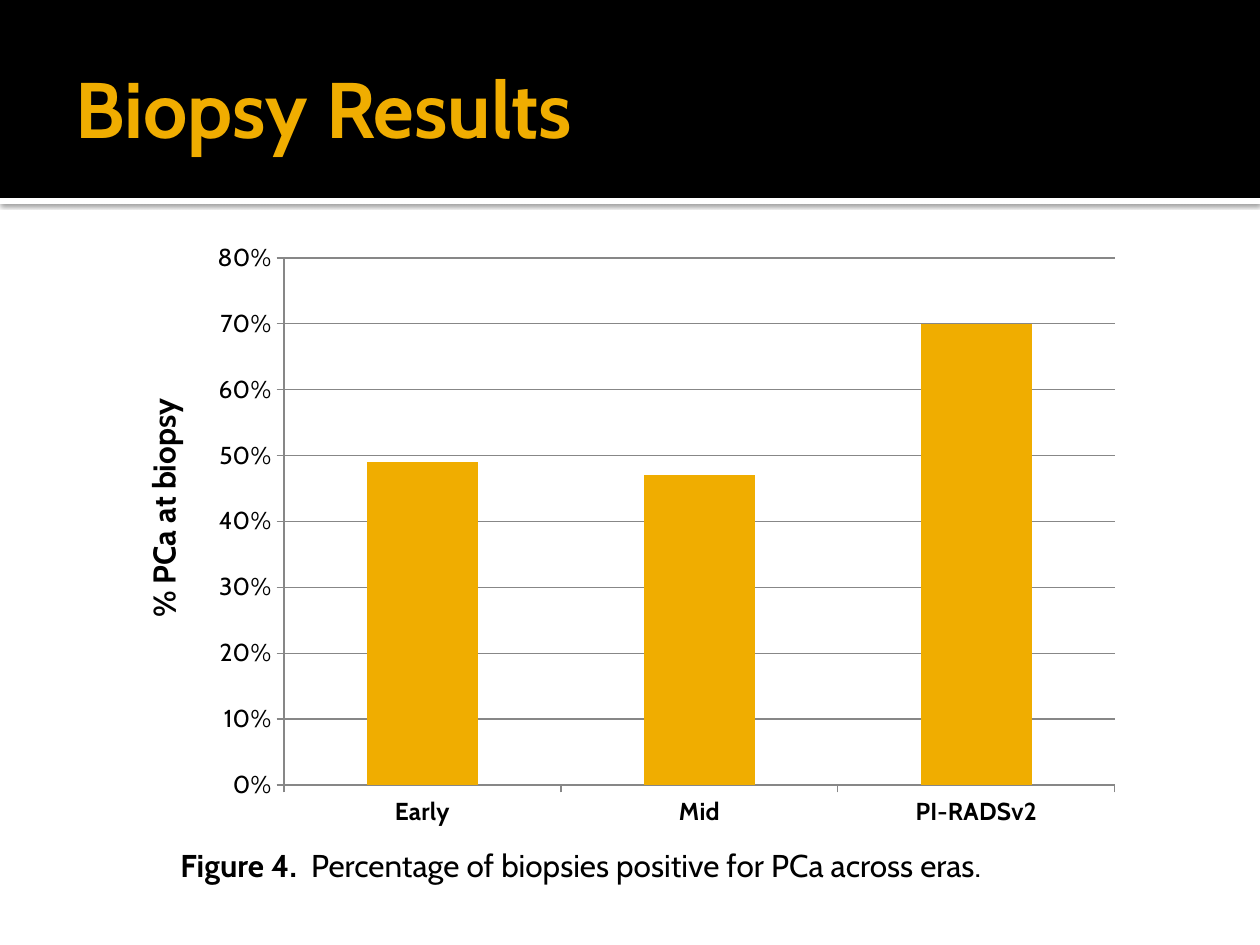
from dataclasses import dataclass
from typing import Any

from lxml import etree
from pptx import Presentation
from pptx.chart.data import CategoryChartData
from pptx.dml.color import RGBColor
from pptx.enum.chart import XL_CHART_TYPE, XL_TICK_MARK
from pptx.enum.shapes import MSO_SHAPE
from pptx.enum.text import MSO_ANCHOR, MSO_AUTO_SIZE, PP_ALIGN
from pptx.oxml import parse_xml
from pptx.oxml.ns import nsdecls, qn
from pptx.util import Emu, Pt

RECT = MSO_SHAPE.RECTANGLE
COLUMN_STACKED = XL_CHART_TYPE.COLUMN_STACKED
TICK_OUT = XL_TICK_MARK.OUTSIDE
MIDDLE = MSO_ANCHOR.MIDDLE
LEFT = PP_ALIGN.LEFT
GROW = MSO_AUTO_SIZE.SHAPE_TO_FIT_TEXT
NO_FIT = MSO_AUTO_SIZE.NONE

SCALE = 914400 / 126
FONT = "Cabin"
BLACK, WHITE, GOLD, GRAY = "000000", "FFFFFF", "F0AD00", "878787"


@dataclass
class Box:
    x: int
    y: int
    w: int
    h: int

    def emu(self) -> list[Emu]:
        return [px(v) for v in (self.x, self.y, self.w, self.h)]


@dataclass
class Band:
    box: Box
    color: str
    shadow: bool = False


@dataclass
class Label:
    box: Box
    runs: list[tuple[str, bool]]
    rotation: int = 0


BANDS = [
    Band(Box(0, 198, 1260, 6), WHITE, True),
    Band(Box(0, 0, 1260, 198), BLACK),
]
LABELS = [
    Label(Box(37, 479, 252, 50), [("% PCa at biopsy", True)], 270),
    Label(
        Box(168, 840, 903, 50),
        [
            ("Figure 4.  ", True),
            ("Percentage of biopsies positive for PCa across eras.", False),
        ],
    ),
]
TITLE_BOX = Box(63, 21, 1134, 173)
CHART_BOX = Box(199, 231, 935, 609)
PLOT_BOX = Box(284, 258, 831, 527)


def px(value: int) -> Emu:
    return Emu(round(value * SCALE))


def rgb(value: str) -> RGBColor:
    return RGBColor.from_string(value)


def apply(obj: Any, values: dict[str, Any]) -> None:
    for name, value in values.items():
        setattr(obj, name, value)


def place(sp: Any, box: Box) -> None:
    apply(sp, dict(zip(("left", "top", "width", "height"), box.emu())))


def style_font(font: Any, size: int, bold: bool, color: str = BLACK) -> None:
    apply(font, {"name": FONT, "size": Pt(size), "bold": bold})
    font.color.rgb = rgb(color)


def add_shadow(sp: Any) -> None:
    effects = sp.element.spPr.find(qn("a:effectLst"))
    shadow = etree.SubElement(
        effects,
        qn("a:outerShdw"),
        blurRad=str(Pt(2.5)),
        dist=str(Pt(0.8)),
        dir="5400000",
        rotWithShape="0",
    )
    color = etree.SubElement(shadow, qn("a:srgbClr"), val=BLACK)
    etree.SubElement(color, qn("a:alpha"), val="60000")


def add_band(s: Any, band: Band) -> Any:
    sp = s.shapes.add_shape(RECT, *band.box.emu())
    sp.shadow.inherit = False
    sp.fill.solid()
    sp.fill.fore_color.rgb = rgb(band.color)
    sp.line.fill.background()
    if band.shadow:
        add_shadow(sp)
    return sp


def set_title(sp: Any, text: str) -> None:
    place(sp, TITLE_BOX)
    tf = sp.text_frame
    apply(tf, {
        "text": text, "vertical_anchor": MIDDLE, "auto_size": NO_FIT,
        "margin_left": Pt(7.2), "margin_right": Pt(3.6),
        "margin_top": Pt(3.6), "margin_bottom": Pt(3.6),
    })
    p = tf.paragraphs[0]
    p.alignment = LEFT
    style_font(p.runs[0].font, 45, True, GOLD)


def add_label(s: Any, label: Label) -> None:
    sp = s.shapes.add_textbox(*label.box.emu())
    sp.rotation = label.rotation
    tf = sp.text_frame
    apply(tf, {"word_wrap": True, "auto_size": GROW})
    for text, bold in label.runs:
        r = tf.paragraphs[0].add_run()
        r.text = text
        style_font(r.font, 18, bold)


def set_plot_area(chart: Any) -> None:
    fractions = {
        "x": (PLOT_BOX.x - CHART_BOX.x) / CHART_BOX.w,
        "y": (PLOT_BOX.y - CHART_BOX.y) / CHART_BOX.h,
        "w": PLOT_BOX.w / CHART_BOX.w,
        "h": PLOT_BOX.h / CHART_BOX.h,
    }
    modes = '<c:xMode val="edge"/><c:yMode val="edge"/>'
    sizes = "".join(f'<c:{k} val="{v:.4f}"/>' for k, v in fractions.items())
    layout = parse_xml(
        f'<c:layout {nsdecls("c")}><c:manualLayout>'
        f'<c:layoutTarget val="inner"/>{modes}{sizes}'
        "</c:manualLayout></c:layout>"
    )
    chart.element.find(".//" + qn("c:plotArea")).insert(0, layout)


def style_axis(axis: Any, bold: bool) -> None:
    axis.major_tick_mark = TICK_OUT
    style_font(axis.tick_labels.font, 14, bold)
    axis.format.line.color.rgb = rgb(GRAY)
    axis.format.line.width = Pt(0.75)


def add_biopsy_chart(s: Any) -> None:
    data = CategoryChartData(number_format="0%")
    data.categories = ["Early", "Mid", "PI-RADSv2"]
    data.add_series("Series 1", [0.49, 0.47, 0.7])
    chart = s.shapes.add_chart(COLUMN_STACKED, *CHART_BOX.emu(), data).chart
    apply(chart, {"has_legend": False, "has_title": False})
    style_font(chart.font, 10, False)
    set_plot_area(chart)

    plot = chart.plots[0]
    apply(plot, {"gap_width": 150, "overlap": 100, "vary_by_categories": False})
    fill = plot.series[0].format.fill
    fill.solid()
    fill.fore_color.rgb = rgb(GOLD)

    style_axis(chart.category_axis, True)
    axis = chart.value_axis
    style_axis(axis, False)
    apply(axis, {
        "minimum_scale": 0, "maximum_scale": 0.8, "major_unit": 0.1,
        "has_major_gridlines": True,
    })
    apply(axis.tick_labels, {"number_format": "0%", "number_format_is_linked": False})
    line = axis.major_gridlines.format.line
    line.color.rgb = rgb(GRAY)
    line.width = Pt(0.75)


def main() -> None:
    prs = Presentation()
    apply(prs, {"slide_width": px(1260), "slide_height": px(945)})
    s = prs.slides.add_slide(prs.slide_layouts[5])
    title = s.shapes.title
    bands = [add_band(s, band) for band in BANDS]
    bands[-1].element.addnext(title.element)
    set_title(title, "Biopsy Results")
    for label in LABELS:
        add_label(s, label)
    add_biopsy_chart(s)
    prs.save("out.pptx")


if __name__ == "__main__":
    main()
